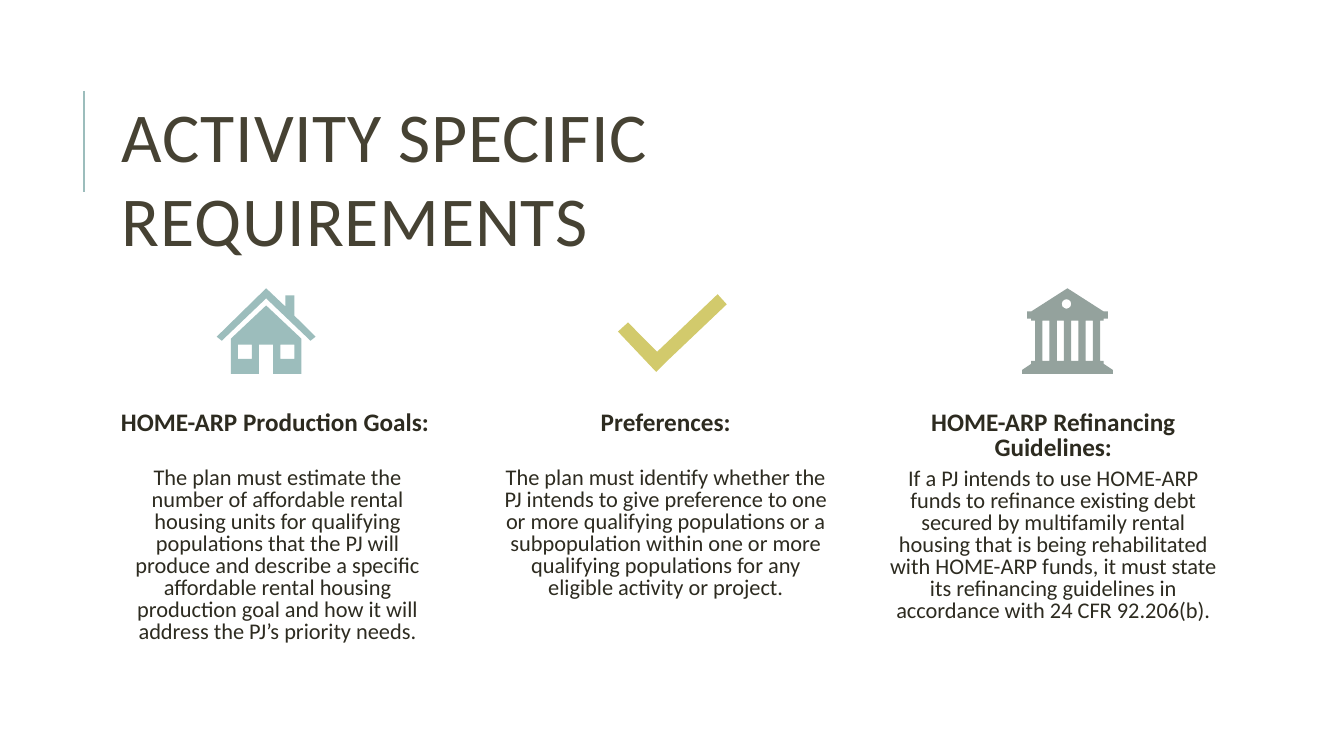
from math import cos, pi, sin

from lxml.etree import SubElement
from pptx import Presentation
from pptx.dml.color import RGBColor
from pptx.enum.shapes import MSO_CONNECTOR
from pptx.enum.text import MSO_ANCHOR, MSO_AUTO_SIZE, PP_ALIGN
from pptx.oxml.ns import qn
from pptx.util import Pt

# Content
TITLE = "ACTIVITY SPECIFIC REQUIREMENTS"
GOALS_HEAD = "HOME-ARP Production Goals:"
GOALS_BODY = (
    "The plan must estimate the number of affordable rental housing units for "
    "qualifying populations that the PJ will produce and describe a specific "
    "affordable rental housing production goal and how it will",
    "address the PJ’s priority needs.",
)
PREFERENCES_HEAD = "Preferences:"
PREFERENCES_BODY = (
    "The plan must identify whether the PJ intends to give preference to one or "
    "more qualifying populations or a subpopulation within one or more qualifying "
    "populations for any eligible activity or project."
)
REFINANCING_HEAD = "HOME-ARP Refinancing Guidelines:"
REFINANCING_BODY = (
    "If a PJ intends to use HOME-ARP funds to refinance existing debt secured by "
    "multifamily rental housing that is being rehabilitated with HOME-ARP funds, "
    "it must state its refinancing guidelines in accordance with 24 CFR 92.206(b)."
)

FONT = "Calibri"
COLORS = {
    "title": "464233",
    "text": "2D2B20",
    "teal": "9CBDBC",
    "olive": "D2CA6C",
    "sage": "94A29D",
}
HEAD_TOP, BODY_TOP = 289.4, 329.8
HEAD = {"size": 18, "bold": True}
BODY = {"size": 16, "align": PP_ALIGN.CENTER, "spacing": 0.82, "before": 4.5}


def rectangle(left, top, right, bottom):
    return [(left, top), (right, top), (right, bottom), (left, bottom)]


# Icon outlines, in points on the slide
HOUSE = [
    [(190.1, 218.2), (215.3, 241.9), (215.3, 267.1), (195.1, 267.1), (195.1, 246.2),
     (185, 246.2), (185, 267.1), (164.9, 267.1), (164.9, 241.9)],
    rectangle(169.9, 246.2, 180, 256.3),
    rectangle(200.2, 246.2, 210.2, 256.3),
    [(225.4, 240.5), (210.2, 225.4), (210.2, 211), (203.8, 211), (203.8, 218.9),
     (190.1, 205.9), (154.8, 240.5), (158.4, 243.4), (190.1, 213.1), (221.8, 243.4)],
]
CHECK = [
    [(512.6, 210.2), (469.4, 251.3), (448.6, 230.4), (441.4, 236.9), (468.7, 265.7),
     (475.9, 258.5), (519.1, 217.4)],
]
BANK = [
    [(788.4, 257.8), (736.6, 257.8), (736.6, 259.9), (730.1, 264.2), (730.1, 267.1),
     (794.9, 267.1), (794.9, 264.2), (788.4, 259.9)],
    *[rectangle(739.4 + 10.3 * i, 229, 744.6 + 10.3 * i, 257.8) for i in range(5)],
    rectangle(736.6, 227.5, 788.4, 229),
    rectangle(733.7, 222.5, 791.3, 227.5),
    [(762.5, 205.9), (736.6, 222.5), (788.4, 222.5)],
    [(761.8 + 3.4 * cos(i * pi / 6), 217.1 + 3.4 * sin(i * pi / 6)) for i in range(12)],
]


def place(shape, left, top, width, height):
    shape.left, shape.top = Pt(left), Pt(top)
    shape.width, shape.height = Pt(width), Pt(height)


def prepare_frame(frame, inset_top):
    frame.word_wrap = True
    frame.auto_size = MSO_AUTO_SIZE.SHAPE_TO_FIT_TEXT
    frame.vertical_anchor = MSO_ANCHOR.TOP
    frame.margin_left = frame.margin_right = frame.margin_bottom = 0
    frame.margin_top = Pt(inset_top)
    return frame


def write(frame, text, size, color="text", bold=False, align=PP_ALIGN.LEFT,
          spacing=1.0, before=1, tracking=0):
    """Add one paragraph, using the first one while it is still empty."""
    para = frame.paragraphs[0] if not frame.text else frame.add_paragraph()
    para.alignment, para.line_spacing = align, spacing
    para.space_before = Pt(before)
    span = para.add_run()
    span.text = text
    span.font.name, span.font.size, span.font.bold = FONT, Pt(size), bold
    span.font.color.rgb = RGBColor.from_string(COLORS[color])
    if tracking:
        span._r.get_or_add_rPr().set("spc", str(int(tracking * 100)))


def add_box(left, top, width, height, inset_top):
    box = page.shapes.add_textbox(Pt(left), Pt(top), Pt(width), Pt(height))
    return prepare_frame(box.text_frame, inset_top)


def add_icon(outlines, color):
    outlines = [[(Pt(x), Pt(y)) for x, y in outline] for outline in outlines]
    builder = page.shapes.build_freeform(*outlines[0][0])
    for number, outline in enumerate(outlines):
        if number:
            builder.move_to(*outline[0])
        builder.add_line_segments(outline[1:], close=True)
    icon = builder.convert_to_shape()
    icon.shadow.inherit = False
    icon.fill.solid()
    icon.fill.fore_color.rgb = RGBColor.from_string(COLORS[color])
    icon.line.fill.background()


deck = Presentation()
deck.slide_width, deck.slide_height = Pt(960), Pt(540)
page = deck.slides.add_slide(deck.slide_layouts[5])

# Title and the rule beside it
title = page.shapes.title
place(title, 87.1, 65.5, 617, 61.9)
write(prepare_frame(title.text_frame, 0.7), TITLE, size=50, color="title",
      before=0.9, tracking=0.5)
rule = page.shapes.add_connector(MSO_CONNECTOR.STRAIGHT, Pt(60), Pt(65), Pt(60), Pt(137))
rule.line.color.rgb = RGBColor.from_string(COLORS["teal"])
rule.line.width = Pt(1.5)
SubElement(rule._element.spPr, qn("a:effectLst"))

# Production goals
add_icon(HOUSE, "teal")
write(add_box(86.4, HEAD_TOP, 225.4, 23.8, 0.7), GOALS_HEAD, **HEAD)
goals = add_box(87.8, BODY_TOP, 221, 115.2, 4.3)
write(goals, GOALS_BODY[0], **BODY)
write(goals, GOALS_BODY[1], **{**BODY, "spacing": Pt(15.7), "before": 0})

# Preferences
add_icon(CHECK, "olive")
write(add_box(429.1, HEAD_TOP, 92.9, 23.8, 0.7), PREFERENCES_HEAD, **HEAD)
write(add_box(360, BODY_TOP, 231.1, 99.4, 4.3), PREFERENCES_BODY, **BODY)

# Refinancing guidelines: heading and text share one box
add_icon(BANK, "sage")
refinancing = add_box(633.6, HEAD_TOP, 237.6, 156.2, 5)
write(refinancing, REFINANCING_HEAD, align=PP_ALIGN.CENTER, spacing=Pt(17.6),
      before=4.9, **HEAD)
write(refinancing, REFINANCING_BODY, **{**BODY, "before": 5.2})

deck.save("out.pptx")
